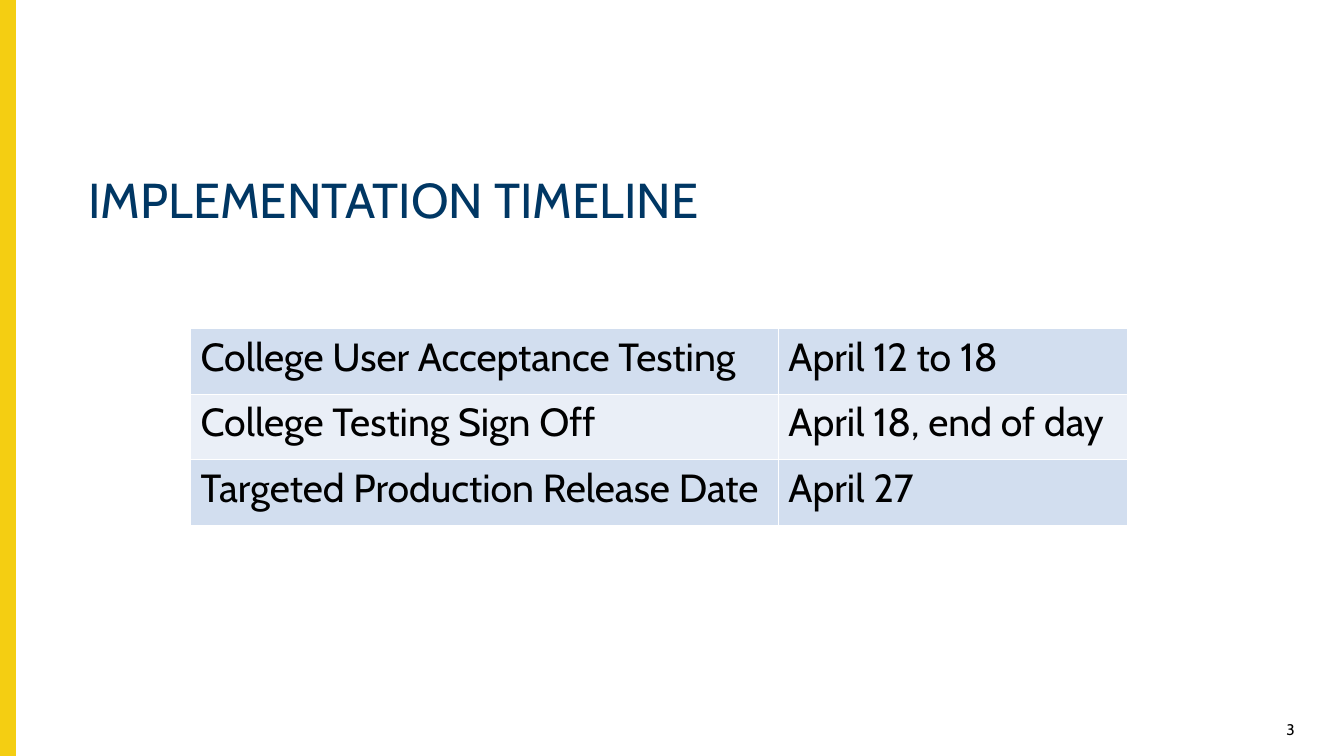
from pptx import Presentation
from pptx.dml.color import RGBColor
from pptx.enum.shapes import MSO_SHAPE
from pptx.enum.text import MSO_ANCHOR, PP_ALIGN
from pptx.oxml import parse_xml
from pptx.oxml.ns import nsdecls
from pptx.util import Inches, Pt

FONT = "Cabin"
YELLOW = RGBColor(0xF4, 0xCE, 0x12)
NAVY = RGBColor(0x00, 0x37, 0x64)
BLACK = RGBColor(0x00, 0x00, 0x00)
BAND_COLOURS = (RGBColor(0xD2, 0xDE, 0xEF), RGBColor(0xEA, 0xEF, 0xF7))
BORDER_COLOUR = "FFFFFF"

MILESTONES = [
    ("College User Acceptance Testing", "April 12 to 18"),
    ("College Testing Sign Off", "April 18, end of day"),
    ("Targeted Production Release Date", "April 27"),
]


def write(frame, text, size, colour, align=PP_ALIGN.LEFT):
    """Put one run in the frame's first paragraph and return the paragraph."""
    para = frame.paragraphs[0]
    para.alignment = align
    span = para.add_run()
    span.text = text
    span.font.name = FONT
    span.font.size = Pt(size)
    span.font.color.rgb = colour
    return para


def add_side_bar(page, left, top, width, height):
    bar = page.shapes.add_shape(MSO_SHAPE.RECTANGLE, left, top, width, height)
    bar.shadow.inherit = False
    bar.fill.solid()
    bar.fill.fore_color.rgb = YELLOW
    bar.line.color.rgb = YELLOW
    bar.line.width = Pt(1)


def place_title(page, text, left, top, width, height):
    title = page.shapes.title
    title.left, title.top, title.width, title.height = left, top, width, height
    title.text_frame.vertical_anchor = MSO_ANCHOR.TOP
    title.text_frame.word_wrap = True
    write(title.text_frame, text, 35, NAVY).line_spacing = 0.9


def add_page_number(page, number, left, top, width, height):
    box = page.shapes.add_textbox(left, top, width, height)
    box.text_frame.word_wrap = True
    write(box.text_frame, number, 11, BLACK, PP_ALIGN.RIGHT)


def add_borders(cell):
    properties = cell._tc.get_or_add_tcPr()
    for position, side in enumerate(("lnL", "lnR", "lnT", "lnB")):
        border = parse_xml(
            f'<a:{side} {nsdecls("a")} w="{Pt(1)}"><a:solidFill>'
            f'<a:srgbClr val="{BORDER_COLOUR}"/></a:solidFill></a:{side}>'
        )
        properties.insert(position, border)


def add_timeline(page, milestones, left, top, column_widths, row_height):
    frame = page.shapes.add_table(
        len(milestones), len(column_widths), left, top,
        sum(column_widths), row_height * len(milestones),
    )
    table = frame.table
    table.first_row = False
    for column, width in zip(table.columns, column_widths):
        column.width = width
    for index, (row, texts) in enumerate(zip(table.rows, milestones)):
        row.height = row_height
        for cell, text in zip(row.cells, texts):
            cell.fill.solid()
            cell.fill.fore_color.rgb = BAND_COLOURS[index % 2]
            add_borders(cell)
            write(cell.text_frame, text, 28, BLACK)


def main():
    deck = Presentation()
    deck.slide_width, deck.slide_height = Inches(13.33), Inches(7.5)
    page = deck.slides.add_slide(deck.slide_layouts[5])
    add_side_bar(page, 0, 0, Inches(0.15), deck.slide_height)
    place_title(page, "IMPLEMENTATION TIMELINE",
                Inches(0.78), Inches(1.7), Inches(12.16), Inches(0.87))
    add_page_number(page, "3", Inches(12.26), Inches(7.09), Inches(0.68), Inches(0.26))
    add_timeline(page, MILESTONES, Inches(1.89), Inches(3.26),
                 (Inches(5.83), Inches(3.46)), Inches(0.65))
    deck.save("out.pptx")


if __name__ == "__main__":
    main()
